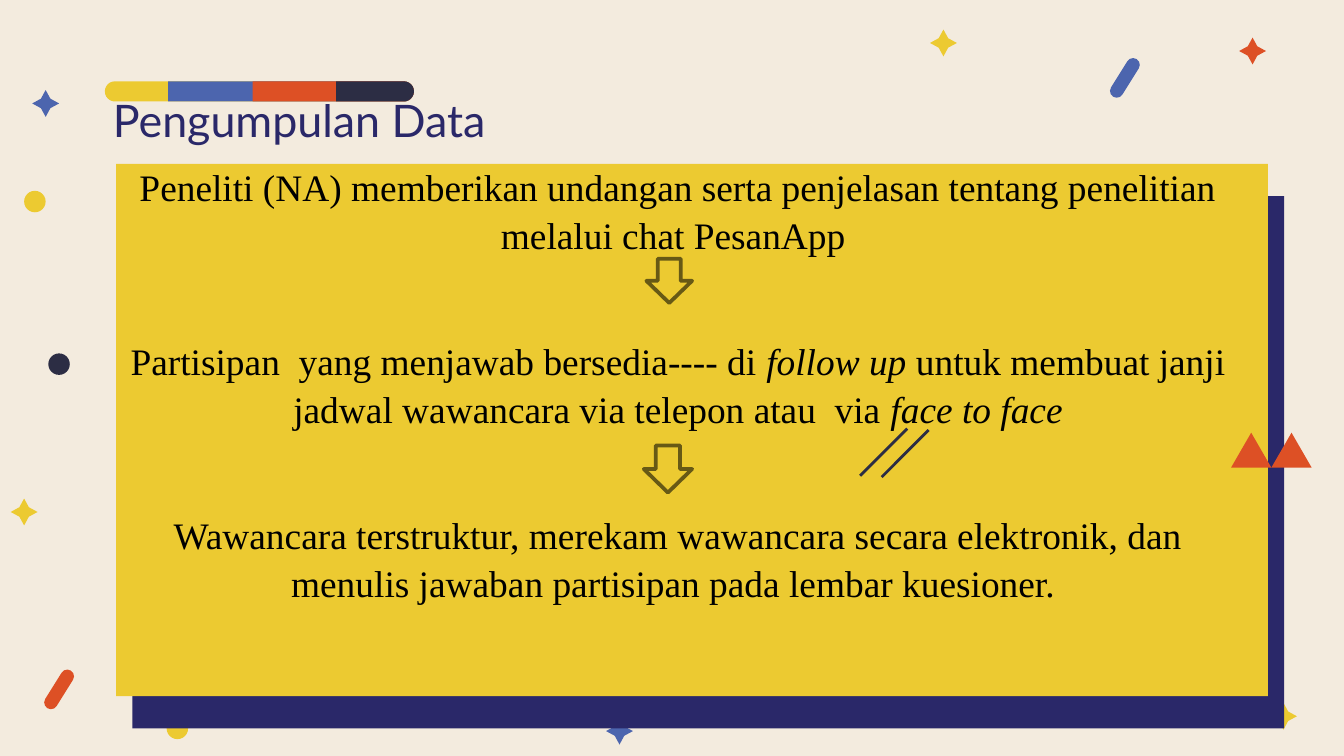
"""Build the data collection slide with its three-step flow."""
from dataclasses import dataclass
from lxml.etree import SubElement
from pptx import Presentation
from pptx.dml.color import RGBColor
from pptx.enum.shapes import MSO_CONNECTOR, MSO_SHAPE
from pptx.enum.text import MSO_ANCHOR, PP_ALIGN
from pptx.oxml.ns import qn
from pptx.util import Inches, Pt


@dataclass
class Theme:
    cream: str = "F3EBDE"
    gold: str = "ECCA31"
    blue: str = "4C65AE"
    red: str = "DD5025"
    dark: str = "2C2D44"
    navy: str = "2A2869"
    olive: str = "675915"
    black: str = "000000"
    title: int = 24
    body: int = 20


theme = Theme()
deck = Presentation()
deck.slide_width, deck.slide_height = Inches(10), Inches(10 * 9 / 16)
slide = deck.slides.add_slide(deck.slide_layouts[6])
slide.background.fill.solid()
slide.background.fill.fore_color.rgb = RGBColor.from_string(theme.cream)


def draw(kind, x, y, wide, high, color, turn=0):
    """Add a filled shape centred on x, y."""
    shape = slide.shapes.add_shape(
        kind, Inches(x - wide / 2), Inches(y - high / 2), Inches(wide), Inches(high))
    shape.shadow.inherit = False
    shape.fill.solid()
    shape.fill.fore_color.rgb = RGBColor.from_string(color)
    shape.line.fill.background()
    shape.rotation = turn
    return shape


def style(run, face, size, color):
    """Set the font of a run."""
    run.font.name, run.font.size = face, Pt(size)
    run.font.color.rgb = RGBColor.from_string(color)


for x, y, color in [(7.02, 0.32, theme.gold), (9.55, 5.33, theme.gold),
                    (4.61, 5.44, theme.blue), (0.18, 3.81, theme.gold),
                    (0.34, 0.77, theme.blue), (9.32, 0.38, theme.red)]:
    star = draw(MSO_SHAPE.STAR_4_POINT, x, y, 0.2, 0.2, color)
    star.adjustments[0] = 0.25

for x, y, color in [(1.32, 5.42, theme.gold), (0.44, 2.71, theme.dark),
                    (0.26, 1.5, theme.gold)]:
    draw(MSO_SHAPE.OVAL, x, y, 0.16, 0.16, color)

for x, y, color in [(0.44, 5.13, theme.red), (8.37, 0.58, theme.blue)]:
    pill = draw(MSO_SHAPE.ROUNDED_RECTANGLE, x, y, 0.1, 0.33, color, 32)
    pill.adjustments[0] = 0.5

right = 3.08
for left, color, tail in [(0.78, theme.gold, 0.5), (1.25, theme.blue, 0),
                          (1.88, theme.red, 0), (2.5, theme.dark, 0)]:
    bar = draw(MSO_SHAPE.ROUND_2_SAME_RECTANGLE, (left + right) / 2, 0.68,
               0.15, right - left, color, 90)
    bar.adjustments[0], bar.adjustments[1] = 0.5, tail

for x, y, color in [(5.27, 3.44, theme.navy), (5.15, 3.2, theme.gold)]:
    draw(MSO_SHAPE.RECTANGLE, x, y, 8.57, 3.96, color)

title = slide.shapes.add_textbox(
    Inches(0.84), Inches(0.68), Inches(4.31), Inches(0.42)).text_frame
title.margin_left = title.margin_right = title.margin_top = title.margin_bottom = 0
title.word_wrap = True
title.vertical_anchor = MSO_ANCHOR.MIDDLE
title.text = "Pengumpulan Data"
style(title.paragraphs[0].runs[0], "Lato", theme.title, theme.navy)

for x, y in [(6.4, 3.54), (6.56, 3.55)]:
    dash = slide.shapes.add_connector(
        MSO_CONNECTOR.STRAIGHT, Inches(x + 0.35), Inches(y - 0.35), Inches(x), Inches(y))
    dash.line.color.rgb = RGBColor.from_string(theme.dark)
    dash.line.width = Pt(1.5)
    SubElement(dash._element.spPr, qn("a:effectLst"))

for x in (9.31, 9.61):
    draw(MSO_SHAPE.ISOSCELES_TRIANGLE, x, 3.35, 0.3, 0.26, theme.red)

steps = [
    [("Peneliti (NA) memberikan undangan serta penjelasan tentang penelitian "
      "melalui chat PesanApp ", False)],
    [("Partisipan  yang menjawab bersedia---- di ", False), ("follow up ", True),
     ("untuk membuat janji jadwal wawancara via telepon atau  via ", False),
     ("face to face", True)],
    [("Wawancara terstruktur, merekam wawancara secara elektronik, dan "
      "menulis jawaban partisipan pada lembar kuesioner. ", False)],
]
body = slide.shapes.add_textbox(
    Inches(0.84), Inches(1.15), Inches(8.41), Inches(3.41)).text_frame
body.word_wrap = True
for i, step in enumerate(steps):
    para = body.add_paragraph() if i else body.paragraphs[0]
    para.alignment = PP_ALIGN.CENTER
    para.line_spacing = 1.07
    para.space_after = Pt(41.9)
    for text, slant in step:
        run = para.add_run()
        run.text = text
        run.font.italic = slant
        style(run, "Times New Roman", theme.body, theme.black)

for x, y, wide, high in [(4.98, 2.09, 0.34, 0.33), (4.97, 3.49, 0.36, 0.35)]:
    arrow = draw(MSO_SHAPE.DOWN_ARROW, x, y, wide, high, theme.gold)
    arrow.line.color.rgb = RGBColor.from_string(theme.olive)
    arrow.line.width = Pt(2)

deck.save("out.pptx")
